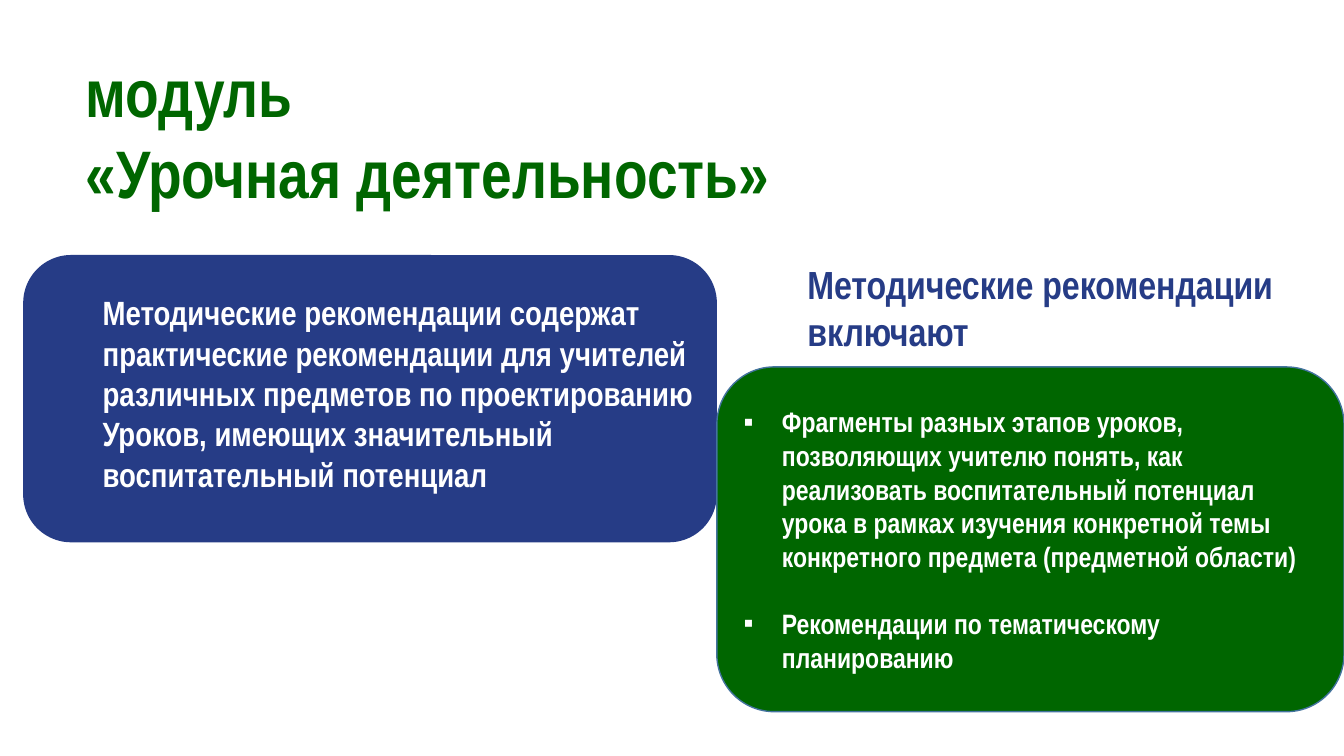
from dataclasses import dataclass

from lxml.etree import SubElement
from pptx import Presentation
from pptx.dml.color import RGBColor
from pptx.enum.shapes import MSO_SHAPE as Shape
from pptx.enum.text import MSO_ANCHOR as Anchor, MSO_AUTO_SIZE as AutoSize, PP_ALIGN as Align
from pptx.oxml.ns import qn
from pptx.util import Inches, Pt


@dataclass(frozen=True)
class Theme:
    font: str = "Arial Narrow"
    green: str = "006600"
    blue: str = "263C86"
    white: str = "FFFFFF"
    outline: str = "43739E"
    title_size: int = 48
    heading_size: int = 28
    body_size: int = 24
    list_size: int = 20
    list_gap: int = 24
    list_indent: float = 0.38


class SlideBuilder:
    """Draws styled elements on the current slide."""

    def __init__(self, slide, theme):
        self.slide = slide
        self.theme = theme

    def fill_text(self, frame, lines, size, color, anchor=Anchor.TOP):
        frame.word_wrap = True
        frame.vertical_anchor = anchor
        for index, line in enumerate(lines):
            paragraph = frame.add_paragraph() if index else frame.paragraphs[0]
            paragraph.alignment = Align.LEFT
            run = paragraph.add_run()
            run.text = line
            run.font.name = self.theme.font
            run.font.size = Pt(size)
            run.font.bold = True
            run.font.color.rgb = RGBColor.from_string(color)

    def title(self, box, lines):
        shape = self.slide.shapes.title
        shape.left, shape.top, shape.width, shape.height = map(Inches, box)
        self.fill_text(shape.text_frame, lines, self.theme.title_size, self.theme.green)
        shape.text_frame.auto_size = AutoSize.NONE

    def text(self, box, lines, size, color):
        shape = self.slide.shapes.add_textbox(*map(Inches, box))
        self.fill_text(shape.text_frame, lines, size, color)
        shape.text_frame.auto_size = AutoSize.SHAPE_TO_FIT_TEXT

    def card(self, box, fill, outline=None):
        shape = self.slide.shapes.add_shape(Shape.ROUNDED_RECTANGLE, *map(Inches, box))
        shape.shadow.inherit = False
        shape.fill.solid()
        shape.fill.fore_color.rgb = RGBColor.from_string(fill)
        if outline:
            shape.line.color.rgb = RGBColor.from_string(outline)
            shape.line.width = Pt(1)
        else:
            shape.line.fill.background()
        return shape

    def bullet_card(self, box, lines, fill, outline):
        frame = self.card(box, fill, outline).text_frame
        self.fill_text(frame, lines, self.theme.list_size, self.theme.white, Anchor.MIDDLE)
        indent = Inches(self.theme.list_indent)
        for index, paragraph in enumerate(frame.paragraphs):
            if index:
                paragraph.space_before = Pt(self.theme.list_gap)
            properties = paragraph._p.get_or_add_pPr()
            properties.set("marL", str(indent))
            properties.set("indent", str(-indent))
            SubElement(properties, qn("a:buFont")).set("typeface", "Arial")
            SubElement(properties, qn("a:buChar")).set("char", "▪")


def main():
    theme = Theme()
    presentation = Presentation()
    presentation.slide_width = Inches(13.33)
    presentation.slide_height = Inches(7.5)
    slide = presentation.slides.add_slide(presentation.slide_layouts[5])
    builder = SlideBuilder(slide, theme)

    builder.title((0.75, 0.45, 11.73, 1.72), ["модуль", "«Урочная деятельность»"])
    builder.card((0.23, 2.53, 6.88, 2.85), theme.blue)
    builder.text(
        (0.92, 2.85, 6.37, 2.12),
        [
            "Методические рекомендации содержат практические рекомендации "
            "для учителей различных предметов по проектированию",
            "Уроков, имеющих значительный воспитательный потенциал",
        ],
        theme.body_size,
        theme.white,
    )
    builder.text(
        (7.91, 2.53, 5.23, 1.04),
        ["Методические рекомендации включают"],
        theme.heading_size,
        theme.blue,
    )
    builder.bullet_card(
        (7.11, 3.64, 6.22, 3.42),
        [
            "Фрагменты разных этапов уроков, позволяющих учителю понять, "
            "как реализовать воспитательный потенциал урока в рамках изучения "
            "конкретной темы конкретного предмета (предметной области)",
            "Рекомендации по тематическому планированию",
        ],
        theme.green,
        theme.outline,
    )
    presentation.save("out.pptx")


if __name__ == "__main__":
    main()
